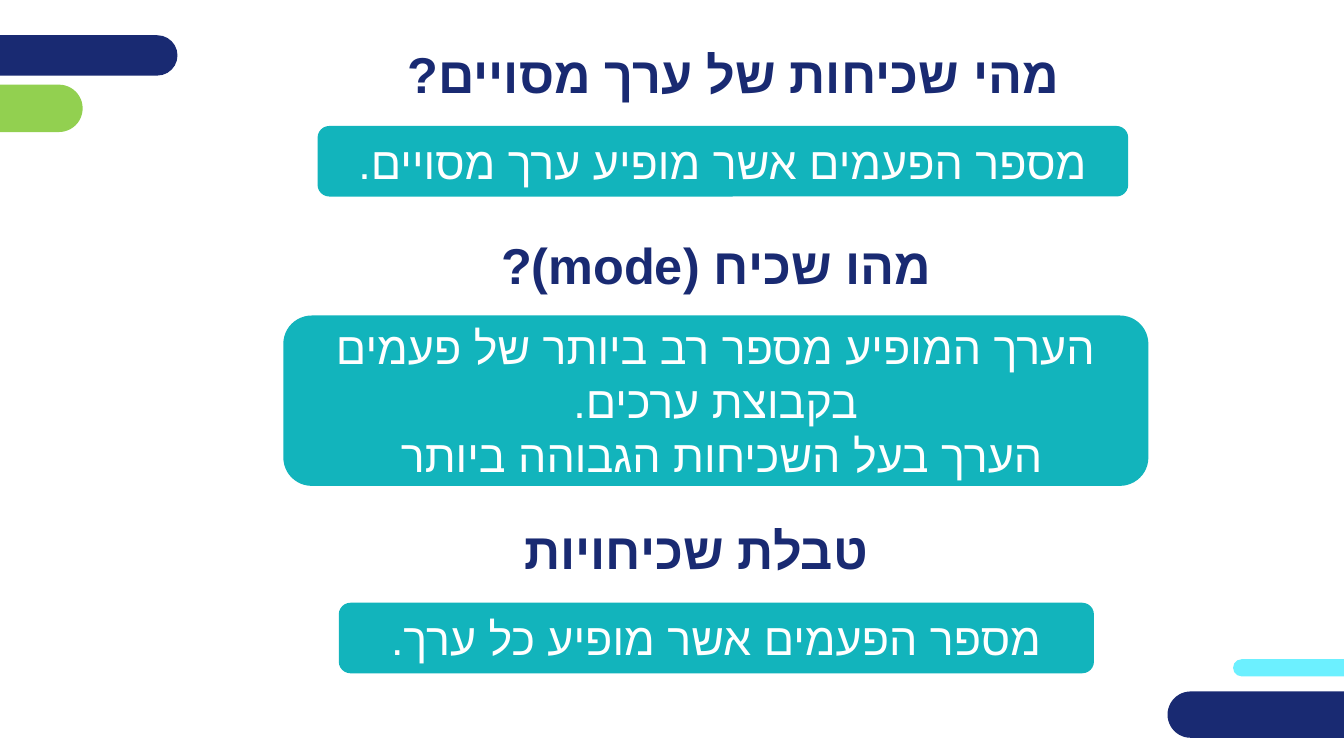
from lxml.etree import SubElement
from pptx import Presentation
from pptx.dml.color import RGBColor
from pptx.enum.shapes import MSO_SHAPE
from pptx.enum.text import MSO_ANCHOR, PP_ALIGN
from pptx.oxml.ns import qn
from pptx.util import Inches, Pt

FONT = "Arial"
COLORS = {
    "navy": "192A72",
    "green": "92D050",
    "cyan": "6CF0FF",
    "teal": "12B4BC",
    "white": "FFFFFF",
}
BARS = [
    ("cyan", 12.23, 6.54, 1.74, 0.17),
    ("green", -0.45, 0.84, 1.27, 0.47),
    ("navy", -0.53, 0.35, 2.29, 0.4),
    ("navy", 11.58, 6.86, 2.4, 0.46),
]
HEADING_WIDTH, HEADING_HEIGHT = 11.21, 0.7
HEADINGS = [
    ("מהי שכיחות של ערך מסויים?", 1.67, 0.38),
    ("מהו שכיח (mode)?", 1.5, 2.27),
    ("טבלת שכיחויות", 1.3, 5.1),
]
ANSWERS = [
    (["מספר הפעמים אשר מופיע ערך מסויים."], 3.15, 1.25, 8.04, 0.7),
    (
        [
            "הערך המופיע מספר רב ביותר של פעמים בקבוצת ערכים.",
            "הערך בעל השכיחות הגבוהה ביותר ",
        ],
        2.81, 3.13, 8.58, 1.69,
    ),
    (["מספר הפעמים אשר מופיע כל ערך."], 3.36, 5.98, 7.49, 0.7),
]


def color(name):
    return RGBColor.from_string(COLORS[name])


def add_filled(page, kind, fill, bounds):
    shape = page.shapes.add_shape(kind, *map(Inches, bounds))
    shape.shadow.inherit = False
    shape.fill.solid()
    shape.fill.fore_color.rgb = color(fill)
    shape.line.fill.background()
    return shape


def write_hebrew(shape, lines, size, ink, bold):
    frame = shape.text_frame
    frame.word_wrap = True
    frame.vertical_anchor = MSO_ANCHOR.MIDDLE
    frame.text = "\n".join(lines)
    for para in frame.paragraphs:
        para.alignment = PP_ALIGN.CENTER
        font = para.font
        font.name, font.size, font.bold = FONT, Pt(size), bold
        font.color.rgb = color(ink)
        properties = para._p.get_or_add_pPr()
        properties.set("rtl", "1")
        SubElement(properties.find(qn("a:defRPr")), qn("a:cs"), typeface=FONT)


def main():
    deck = Presentation()
    deck.slide_width, deck.slide_height = Inches(13.33), Inches(7.5)
    page = deck.slides.add_slide(deck.slide_layouts[6])

    for fill, *bounds in BARS:
        bar = add_filled(page, MSO_SHAPE.ROUNDED_RECTANGLE, fill, bounds)
        bar.adjustments[0] = 0.5

    for text, left, top in HEADINGS:
        bounds = (left, top, HEADING_WIDTH, HEADING_HEIGHT)
        box = page.shapes.add_textbox(*map(Inches, bounds))
        write_hebrew(box, [text], 36, "navy", True)

    for lines, *bounds in ANSWERS:
        box = add_filled(page, MSO_SHAPE.FLOWCHART_ALTERNATE_PROCESS, "teal", bounds)
        write_hebrew(box, lines, 32, "white", False)

    deck.save("out.pptx")


if __name__ == "__main__":
    main()
